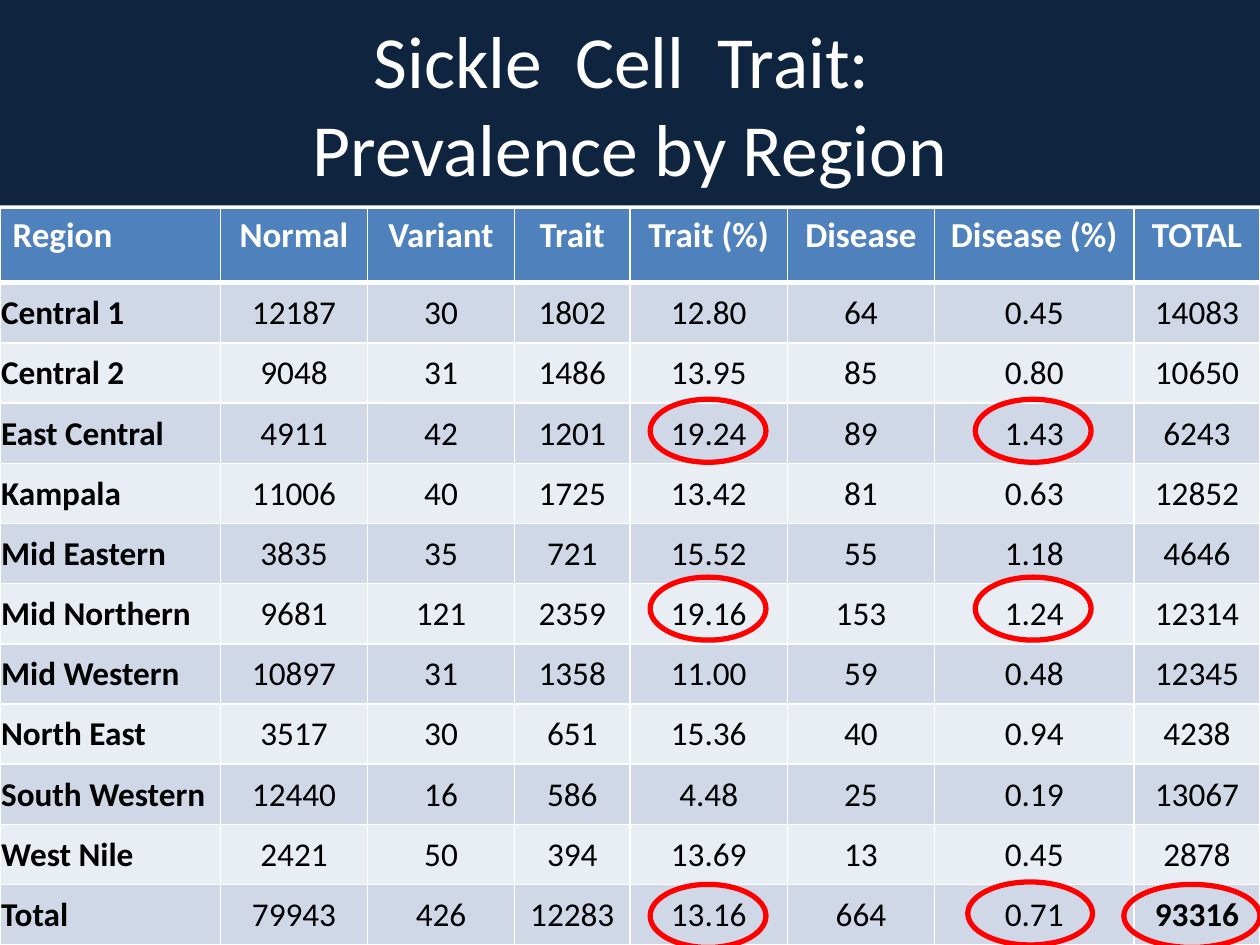
from lxml import etree
from pptx import Presentation
from pptx.dml.color import RGBColor
from pptx.enum.shapes import MSO_SHAPE
from pptx.enum.text import MSO_ANCHOR, PP_ALIGN
from pptx.oxml.ns import qn
from pptx.util import Pt

NAVY = RGBColor(0x0F, 0x24, 0x3E)
BLUE = RGBColor(0x4F, 0x81, 0xBD)
BAND_DARK = RGBColor(0xD0, 0xD8, 0xE8)
BAND_LIGHT = RGBColor(0xE9, 0xED, 0xF4)
WHITE = RGBColor(0xFF, 0xFF, 0xFF)
BLACK = RGBColor(0, 0, 0)
RED = RGBColor(0xFF, 0, 0)

HEADER = ["Region", "Normal", "Variant", "Trait", "Trait (%)", "Disease", "Disease (%)", "TOTAL"]
REGIONS = [
    ["Central 1", "12187", "30", "1802", "12.80", "64", "0.45", "14083"],
    ["Central 2", "9048", "31", "1486", "13.95", "85", "0.80", "10650"],
    ["East Central", "4911", "42", "1201", "19.24", "89", "1.43", "6243"],
    ["Kampala", "11006", "40", "1725", "13.42", "81", "0.63", "12852"],
    ["Mid Eastern", "3835", "35", "721", "15.52", "55", "1.18", "4646"],
    ["Mid Northern", "9681", "121", "2359", "19.16", "153", "1.24", "12314"],
    ["Mid Western", "10897", "31", "1358", "11.00", "59", "0.48", "12345"],
    ["North East", "3517", "30", "651", "15.36", "40", "0.94", "4238"],
    ["South Western", "12440", "16", "586", "4.48", "25", "0.19", "13067"],
    ["West Nile", "2421", "50", "394", "13.69", "13", "0.45", "2878"],
    ["Total", "79943", "426", "12283", "13.16", "664", "0.71", "93316"],
]
COL_WIDTHS = [126, 84, 84, 66, 90, 84, 114, 72]
HEADER_HEIGHT, ROW_HEIGHT = 42.6, 34.4


def write(tf, text, size, color, bold=False, align=PP_ALIGN.CENTER):
    tf.text = text
    p = tf.paragraphs[0]
    p.alignment = align
    for r in p.runs:
        r.font.name = "Calibri"
        r.font.size = Pt(size)
        r.font.bold = bold
        r.font.color.rgb = color


def add_borders(cell, top, bottom):
    """Draw white cell borders; must run before the cell gets its fill."""
    tc_pr = cell._tc.get_or_add_tcPr()
    for side, width in (("L", 1), ("R", 1), ("T", top), ("B", bottom)):
        ln = etree.SubElement(tc_pr, qn(f"a:ln{side}"), w=str(Pt(width)))
        fill = etree.SubElement(ln, qn("a:solidFill"))
        etree.SubElement(fill, qn("a:srgbClr"), val=str(WHITE))


prs = Presentation()
prs.slide_width, prs.slide_height = Pt(720), Pt(540)
s = prs.slides.add_slide(prs.slide_layouts[6])

# Title band
band = s.shapes.add_shape(MSO_SHAPE.RECTANGLE, 0, 0, Pt(720), Pt(117.4))
band.shadow.inherit = False
band.fill.solid()
band.fill.fore_color.rgb = NAVY
band.line.fill.background()
band.text_frame.word_wrap = True
band.text_frame.vertical_anchor = MSO_ANCHOR.MIDDLE
write(band.text_frame, "Sickle  Cell  Trait: \vPrevalence by Region", 42, WHITE)

# Prevalence table
rows = [HEADER] + REGIONS
table = s.shapes.add_table(len(rows), len(HEADER), 0, Pt(119), Pt(720), Pt(421)).table
for col, width in zip(table.columns, COL_WIDTHS):
    col.width = Pt(width)
for i, values in enumerate(rows):
    table.rows[i].height = Pt(ROW_HEIGHT if i else HEADER_HEIGHT)
    for j, value in enumerate(values):
        cell = table.cell(i, j)
        add_borders(cell, top=3 if i == 1 else 1, bottom=1 if i else 3)
        cell.fill.solid()
        align = PP_ALIGN.CENTER if j else PP_ALIGN.LEFT
        if i == 0:
            cell.fill.fore_color.rgb = BLUE
            write(cell.text_frame, value, 20, WHITE, bold=True, align=align)
            continue
        cell.fill.fore_color.rgb = BAND_DARK if i % 2 else BAND_LIGHT
        cell.vertical_anchor = MSO_ANCHOR.MIDDLE
        cell.margin_left = cell.margin_right = cell.margin_top = Pt(0.7)
        cell.margin_bottom = 0
        bold = j == 0 or value == "93316"
        write(cell.text_frame, value, 19, BLACK, bold=bold, align=align)

# Rings around the highest rates and the overall figures: left, top, width
rings = [(642.2, 505.4, 77.8), (371.5, 505.4, 66.2), (553, 504, 71.3)]
rings += [(left, top, 66.2) for left in (371.5, 557.3) for top in (228.2, 329.8)]
for left, top, width in rings:
    ring = s.shapes.add_shape(MSO_SHAPE.OVAL, Pt(left), Pt(top), Pt(width), Pt(36))
    ring.shadow.inherit = False
    ring.fill.background()
    ring.line.color.rgb = RED
    ring.line.width = Pt(3)

prs.save("out.pptx")
